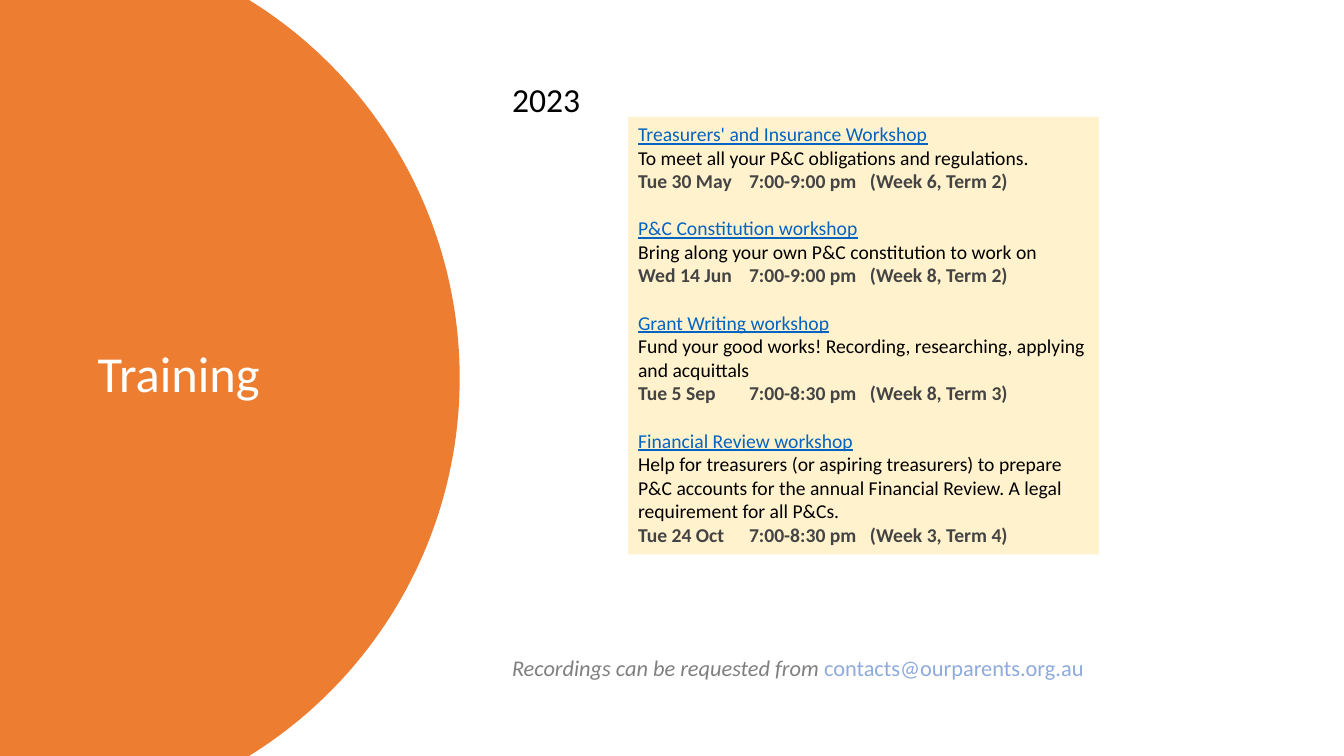
import math

import lxml.etree
import pptx
import pptx.dml.color
import pptx.enum.shapes
import pptx.enum.text
import pptx.oxml.ns
import pptx.util

WIDTH = pptx.util.Inches(13.33)
HEIGHT = pptx.util.Inches(7.5)
COLUMN = WIDTH / 100  # the page is a grid of 100 columns and 100 rows
ROW = HEIGHT / 100
FONT = "Calibri"
COLORS = {
    "orange": "ED7D31", "cream": "FFF2CC", "white": "FFFFFF", "black": "000000",
    "link": "0563C1", "date": "444444", "note": "808080", "mail": "8FAADC",
}
DATE_TABS = (1.1, 2.3)  # inches from the text edge: time, then week
WORKSHOPS = [
    ("Treasurers' and Insurance Workshop",
     "To meet all your P&C obligations and regulations.",
     ("Tue 30 May", "7:00-9:00 pm", "(Week 6, Term 2)")),
    ("P&C Constitution workshop",
     "Bring along your own P&C constitution to work on",
     ("Wed 14 Jun", "7:00-9:00 pm", "(Week 8, Term 2)")),
    ("Grant Writing workshop",
     "Fund your good works! Recording, researching, applying and acquittals",
     ("Tue 5 Sep", "7:00-8:30 pm", "(Week 8, Term 3)")),
    ("Financial Review workshop",
     "Help for treasurers (or aspiring treasurers) to prepare P&C accounts for "
     "the annual Financial Review. A legal requirement for all P&Cs.",
     ("Tue 24 Oct", "7:00-8:30 pm", "(Week 3, Term 4)")),
]


def color(name):
    return pptx.dml.color.RGBColor.from_string(COLORS[name])


def place(left, top, width, height):
    return [round(v) for v in (left * COLUMN, top * ROW, width * COLUMN, height * ROW)]


def paint(shape, fill):
    shape.shadow.inherit = False
    shape.fill.solid()
    shape.fill.fore_color.rgb = color(fill)
    shape.line.fill.background()


def style(span, size, tint, bold=False, italic=False, underline=False):
    font = span.font
    font.name, font.size = FONT, pptx.util.Pt(size)
    font.bold, font.italic, font.underline = bold, italic, underline
    font.color.rgb = color(tint)


def add_disc(page, center_x, center_y, radius):
    """Part of a disc, cut off by the left, top and bottom edges of the page."""
    limit = math.asin(HEIGHT / 2 / radius)
    steps = 120
    angles = [limit * (2 * i / steps - 1) for i in range(steps + 1)]
    arc = [(round(center_x + radius * math.cos(a)),
            round(center_y + radius * math.sin(a))) for a in angles]
    builder = page.shapes.build_freeform(0, 0)
    builder.add_line_segments(arc + [(0, HEIGHT)], close=True)
    paint(builder.convert_to_shape(), "orange")


def add_label(page, area, spans):
    """A text box of one line, made of (text, style) spans."""
    box = page.shapes.add_textbox(*place(*area))
    frame = box.text_frame
    frame.word_wrap = True
    frame.vertical_anchor = pptx.enum.text.MSO_ANCHOR.MIDDLE
    for text, look in spans:
        span = frame.paragraphs[0].add_run()
        span.text = text
        style(span, **look)
    return box


def add_text_shadow(box):
    qn = pptx.oxml.ns.qn
    properties = box.text_frame.paragraphs[0].runs[0].font._element
    effects = lxml.etree.Element(qn("a:effectLst"))
    shadow = lxml.etree.SubElement(effects, qn("a:outerShdw"), blurRad="38100",
                                   dist="38100", dir="2700000", algn="tl")
    tint = lxml.etree.SubElement(shadow, qn("a:srgbClr"), val=COLORS["black"])
    lxml.etree.SubElement(tint, qn("a:alpha"), val="43000")
    properties.find(qn("a:solidFill")).addnext(effects)


def add_tabs(para):
    qn = pptx.oxml.ns.qn
    stops = lxml.etree.SubElement(para._p.get_or_add_pPr(), qn("a:tabLst"))
    for stop in DATE_TABS:
        lxml.etree.SubElement(stops, qn("a:tab"), algn="l",
                              pos=str(int(pptx.util.Inches(stop))))


def add_schedule(page, area, workshops):
    box = page.shapes.add_shape(pptx.enum.shapes.MSO_SHAPE.RECTANGLE, *place(*area))
    paint(box, "cream")
    frame = box.text_frame
    frame.word_wrap = True
    frame.vertical_anchor = pptx.enum.text.MSO_ANCHOR.TOP
    looks = (dict(tint="link", underline=True), dict(tint="black"),
             dict(tint="date", bold=True))
    lines = [(name, about, "\t".join(date)) for name, about, date in workshops]
    frame.text = "\n".join("\n".join(group) for group in lines)
    for index, para in enumerate(frame.paragraphs):
        part = index % len(looks)
        para.alignment = pptx.enum.text.PP_ALIGN.LEFT
        if part == 0 and index:
            para.space_before = pptx.util.Pt(17)
        if part == 2:
            add_tabs(para)
        for span in para.runs:
            style(span, 14, **looks[part])


def main():
    deck = pptx.Presentation()
    deck.slide_width, deck.slide_height = WIDTH, HEIGHT
    page = deck.slides.add_slide(deck.slide_layouts[6])

    # Orange side with the title
    add_disc(page, 1.12 * COLUMN, HEIGHT / 2, 58.8 * ROW)
    title = add_label(page, (6.53, 42.53, 23.93, 13.33),
                      [("Training", dict(size=36, tint="white"))])
    add_text_shadow(title)

    # Year and its workshops
    add_schedule(page, (46.74, 15.47, 35.03, 57.87), WORKSHOPS)
    add_label(page, (37.36, 9.73, 33.68, 6.67),
              [("2023", dict(size=24, tint="black"))])

    # Contact line
    add_label(page, (37.36, 85.87, 52.51, 4.93), [
        ("Recordings can be requested from ", dict(size=16, tint="note", italic=True)),
        ("contacts@ourparents.org.au", dict(size=16, tint="mail")),
    ])
    deck.save("out.pptx")


if __name__ == "__main__":
    main()
